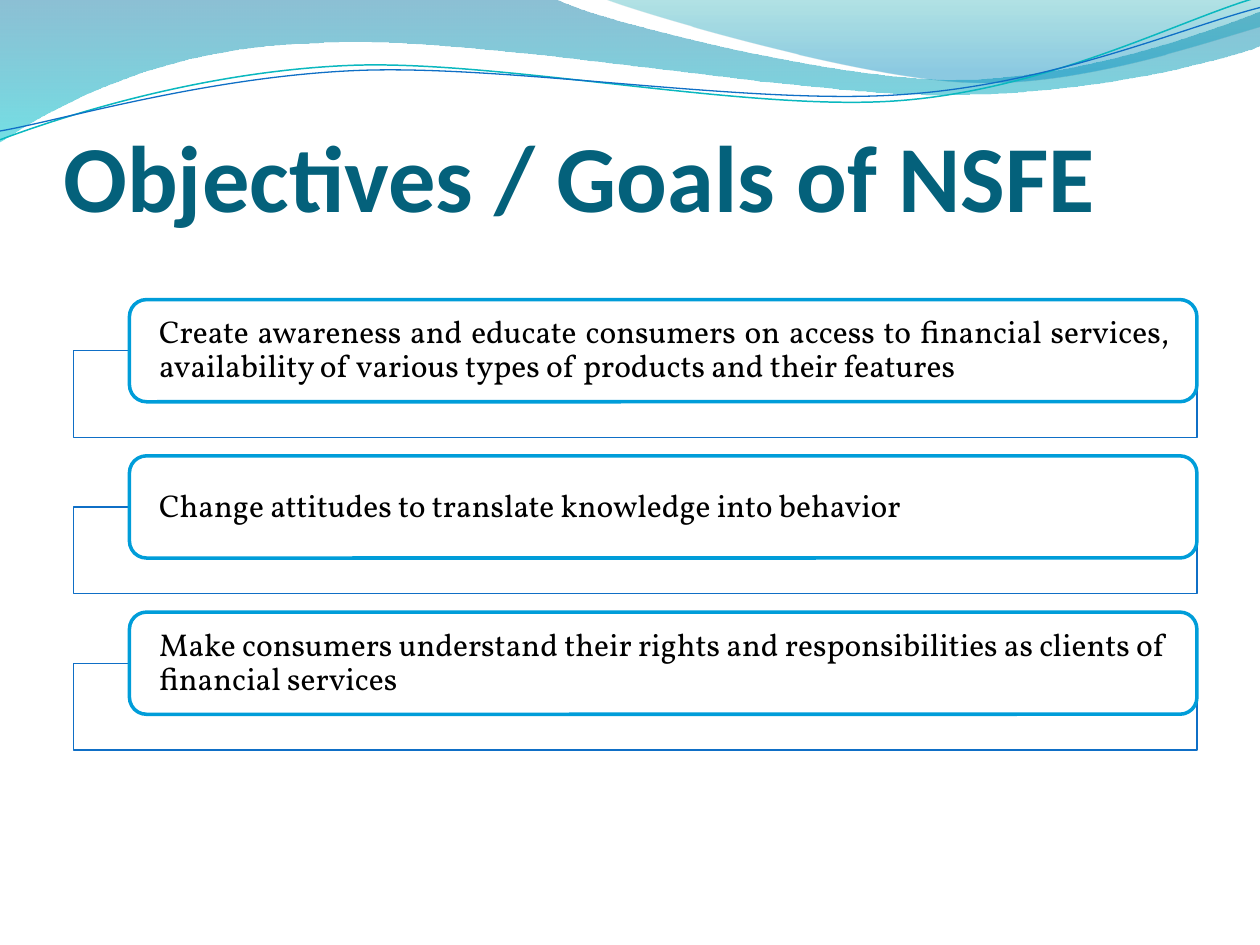
from dataclasses import dataclass
from typing import Optional

from lxml.etree import SubElement
from pptx import Presentation
from pptx.dml.color import RGBColor
from pptx.enum.shapes import MSO_SHAPE
from pptx.enum.text import MSO_ANCHOR, PP_ALIGN
from pptx.oxml.ns import qn
from pptx.util import Cm, Pt

WHITE = RGBColor(0xFF, 0xFF, 0xFF)
BLACK = RGBColor(0x00, 0x00, 0x00)
TITLE_TEAL = RGBColor(0x04, 0x61, 0x7B)
LINE_BLUE = RGBColor(0x0F, 0x6F, 0xC6)
LINE_TEAL = RGBColor(0x0A, 0xB8, 0xBF)
BORDER_BLUE = RGBColor(0x00, 0x9D, 0xD9)
DEEP_BLUE = RGBColor(0x00, 0x74, 0xA1)
CYAN = RGBColor(0x00, 0xC6, 0xCF)
SEA_GREEN = RGBColor(0x00, 0xA1, 0xA9)
SKY_BLUE = RGBColor(0x00, 0x8B, 0xBF)

CM_PER_UNIT = 2.54  # wave coordinates are in units of a tenth of the page width


@dataclass
class Stop:
    position: float
    color: RGBColor
    opacity: int


@dataclass
class Wave:
    """Segments hold two numbers for a straight line, six for a Bezier curve."""
    start: tuple[float, float]
    segments: list[tuple[float, ...]]
    stops: tuple[Stop, ...] = ()
    line: Optional[RGBColor] = None
    weight: float = 0


@dataclass
class Goal:
    text: str
    align: PP_ALIGN = PP_ALIGN.LEFT


WAVES = [
    Wave((0, 0), [
        (4.4, -0.01), (4.76, 0.17, 6.64, 0.63, 7.58, 0.63),
        (8.53, 0.63, 9.58, 0.26, 10, 0.09), (10.01, 0.36),
        (9.83, 0.44, 8.7, 0.76, 7.46, 0.75), (6.22, 0.75, 3.82, 0.28, 2.57, 0.34),
        (1.29, 0.36, 0.46, 0.83, -0.01, 1.13)],
        stops=(Stop(0, DEEP_BLUE, 45), Stop(1, CYAN, 55))),
    Wave((4.79, -0.01), [
        (5.09, 0.11, 6.82, 0.62, 7.69, 0.65), (8.56, 0.69, 9.61, 0.32, 10, 0.21),
        (10, 0)],
        stops=(Stop(0, SEA_GREEN, 30), Stop(0.8, SKY_BLUE, 45))),
    Wave((0, 1.11), [
        (0.48, 0.93, 1.58, 0.57, 2.77, 0.52), (3.95, 0.47, 5.93, 0.89, 7.13, 0.8),
        (8.33, 0.71, 9.38, 0.15, 9.98, -0.02)],
        line=LINE_TEAL, weight=0.85),
    Wave((0, 1.04), [
        (0.47, 0.96, 1.64, 0.61, 2.83, 0.56), (4.03, 0.51, 5.97, 0.84, 7.17, 0.75),
        (8.36, 0.67, 9.41, 0.21, 10, 0.06)],
        line=LINE_BLUE, weight=0.75),
]

GOALS = [
    Goal("Create awareness and educate consumers on access to financial services, "
         "availability of various types of products and their features",
         PP_ALIGN.JUSTIFY),
    Goal("Change attitudes to translate knowledge into behavior"),
    Goal("Make consumers understand their rights and responsibilities as clients of "
         "financial services"),
]
ROW_STEP = 3.15

TITLE_FONT = {"name": "Calibri", "size": Pt(54), "bold": True}
GOAL_FONT = {"name": "Vollkorn", "size": Pt(18)}
TITLE_FRAME = {"word_wrap": True, "vertical_anchor": MSO_ANCHOR.BOTTOM,
               "margin_left": 0, "margin_right": 0,
               "margin_top": Cm(0.13), "margin_bottom": 0}
GOAL_FRAME = {"word_wrap": True, "vertical_anchor": MSO_ANCHOR.MIDDLE,
              "margin_left": Cm(0.5), "margin_right": Cm(0.45),
              "margin_top": 0, "margin_bottom": 0}


def apply_format(target, values: dict) -> None:
    for name, value in values.items():
        setattr(target, name, value)


def set_opacity(color_element, percent: int) -> None:
    SubElement(color_element, qn("a:alpha")).set("val", str(percent * 1000))


def write_text(frame, text: str, frame_format: dict, font_format: dict,
               color: RGBColor, paragraph_format: dict) -> None:
    apply_format(frame, frame_format)
    para = frame.paragraphs[0]
    apply_format(para, paragraph_format)
    span = para.add_run()
    span.text = text
    apply_format(span.font, font_format)
    span.font.color.rgb = color


def to_points(numbers: tuple[float, ...]) -> list[tuple[int, int]]:
    lengths = [Cm(number * CM_PER_UNIT) for number in numbers]
    return list(zip(lengths[::2], lengths[1::2]))


def bend_segments(shape, segments: list[tuple[float, ...]]) -> None:
    """Join each run of three line points into one Bezier curve."""
    outline = shape.element.spPr.find(".//" + qn("a:path"))
    lines = iter(outline.findall(qn("a:lnTo")))
    for segment in segments:
        group = [next(lines) for _ in range(len(segment) // 2)]
        if len(group) == 3:
            curve = SubElement(outline, qn("a:cubicBezTo"))
            group[0].addprevious(curve)
            for line in group:
                curve.append(line[0])
                outline.remove(line)


def draw_wave(page, wave: Wave) -> None:
    points = [point for segment in wave.segments for point in to_points(segment)]
    builder = page.shapes.build_freeform(*to_points(wave.start)[0])
    builder.add_line_segments(points, close=bool(wave.stops))
    shape = builder.convert_to_shape()
    bend_segments(shape, wave.segments)
    shape.shadow.inherit = False
    if wave.stops:
        shape.line.fill.background()
        shape.fill.gradient()
        shape.fill.gradient_angle = 270
        for target, stop in zip(shape.fill.gradient_stops, wave.stops):
            target.position = stop.position
            target.color.rgb = stop.color
        colors = shape.element.spPr.findall(".//" + qn("a:gs") + "/" + qn("a:srgbClr"))
        for color, stop in zip(colors, wave.stops):
            set_opacity(color, stop.opacity)
    else:
        shape.fill.background()
        shape.line.color.rgb = wave.line
        shape.line.width = Pt(wave.weight)


def draw_box(page, kind: MSO_SHAPE, place: tuple[float, ...],
             line: RGBColor, weight: float):
    box = page.shapes.add_shape(kind, *(Cm(length) for length in place))
    box.shadow.inherit = False
    box.fill.solid()
    box.fill.fore_color.rgb = WHITE
    box.line.color.rgb = line
    box.line.width = Pt(weight)
    return box


def draw_goal(page, goal: Goal, offset: float) -> None:
    frame_box = draw_box(page, MSO_SHAPE.RECTANGLE,
                         (1.48, 7.07 + offset, 22.65, 1.75), LINE_BLUE, 0.75)
    set_opacity(frame_box.element.spPr.find(qn("a:solidFill"))[0], 90)
    label = draw_box(page, MSO_SHAPE.ROUNDED_RECTANGLE,
                     (2.61, 6.04 + offset, 21.52, 2.06), BORDER_BLUE, 2)
    write_text(label.text_frame, goal.text, GOAL_FRAME, GOAL_FONT, BLACK,
               {"alignment": goal.align, "line_spacing": 0.9})


def main() -> None:
    deck = Presentation()
    deck.slide_width, deck.slide_height = Cm(25.4), Cm(19.05)
    page = deck.slides.add_slide(deck.slide_layouts[6])

    # Wave banner
    for wave in WAVES:
        draw_wave(page, wave)

    # Title
    title = page.shapes.add_textbox(Cm(1.28), Cm(1.49), Cm(22.86), Cm(3.18))
    write_text(title.text_frame, "Objectives / Goals of NSFE", TITLE_FRAME,
               TITLE_FONT, TITLE_TEAL, {"alignment": PP_ALIGN.LEFT})

    # Goals
    for row, goal in enumerate(GOALS):
        draw_goal(page, goal, row * ROW_STEP)

    deck.save("out.pptx")


if __name__ == "__main__":
    main()
